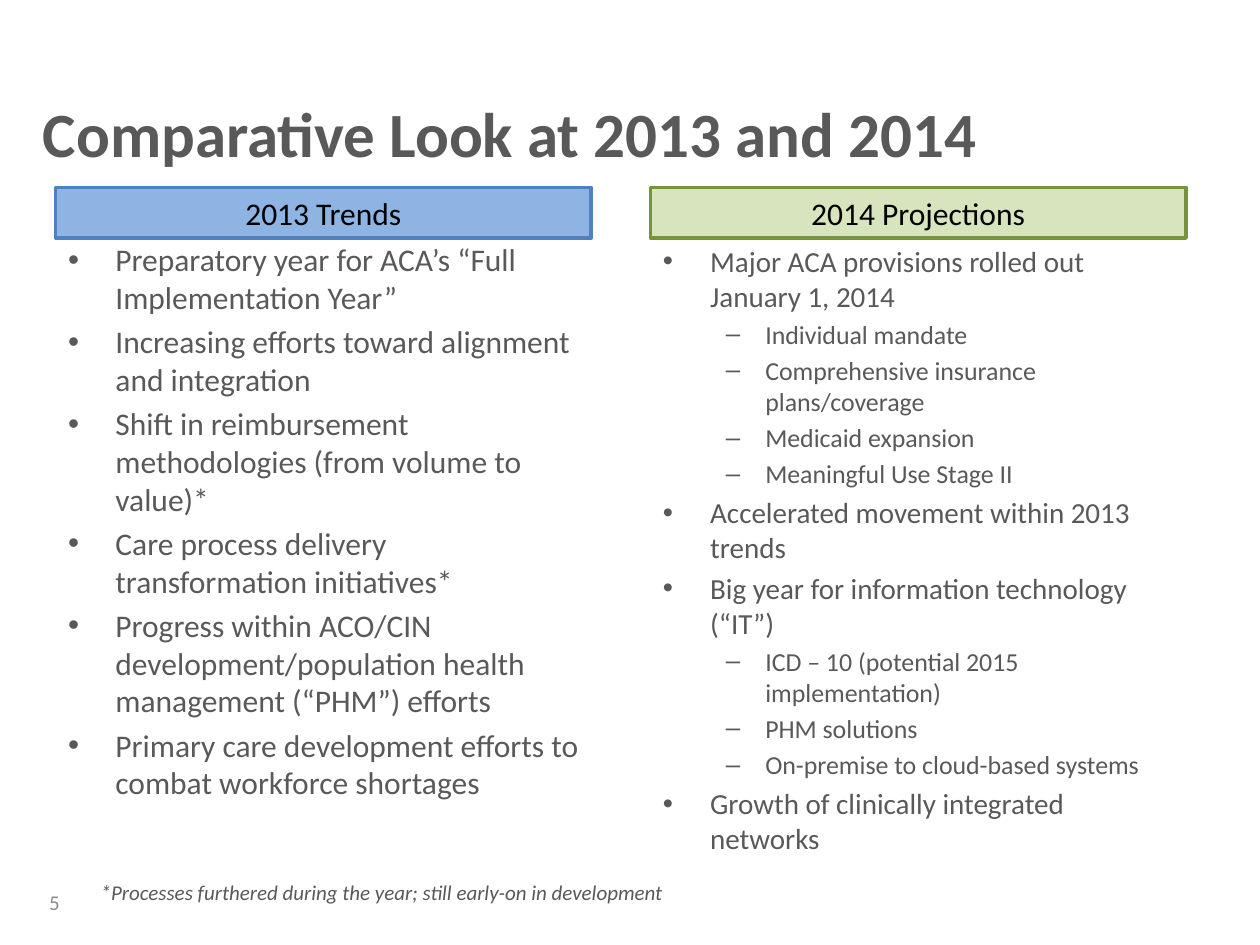
"""Build a slide that sets the trends of 2013 beside the projections for 2014."""
from pptx import Presentation, util as u
from pptx.dml.color import RGBColor
from pptx.enum import shapes, text

GREY = "595959"
TITLE = "Comparative Look at 2013 and 2014"
NOTE = "*Processes furthered during the year; still early-on in development"
COLS = [
    dict(head="2013 Trends", fill="8EB4E3", line="4F81BD", left=1.12,
         top=4.72, high=11.96, sizes=(18, 16), items=[
             (0, "Preparatory year for ACA’s “Full Implementation Year”"),
             (0, "Increasing efforts toward alignment and integration"),
             (0, "Shift in reimbursement methodologies (from volume to value)*"),
             (0, "Care process delivery transformation initiatives*"),
             (0, "Progress within ACO/CIN development/population health "
                 "management (“PHM”) efforts"),
             (0, "Primary care development efforts to combat workforce shortages"),
         ]),
    dict(head="2014 Projections", fill="D7E4BD", line="77933C", left=13.11,
         top=4.78, high=12.19, sizes=(16.6, 14.8), items=[
             (0, "Major ACA provisions rolled out January 1, 2014"),
             (1, "Individual mandate"),
             (1, "Comprehensive insurance plans/coverage"),
             (1, "Medicaid expansion"),
             (1, "Meaningful Use Stage II"),
             (0, "Accelerated movement within 2013 trends"),
             (0, "Big year for information technology (“IT”)"),
             (1, "ICD – 10 (potential 2015 implementation)"),
             (1, "PHM solutions"),
             (1, "On-premise to cloud-based systems"),
             (0, "Growth of clinically integrated networks"),
         ]),
]
WIDE, HEAD_TOP, HEAD_HIGH = 10.8, 3.78, 1.02


def hue(code):
    return RGBColor.from_string(code)


def box(*cms):
    return [u.Cm(n) for n in cms]


def place(shape, *cms):
    shape.left, shape.top, shape.width, shape.height = box(*cms)


def write(shape, items, sizes=(18,), color=GREY, bold=False, italic=False,
          align=text.PP_ALIGN.LEFT, anchor=text.MSO_ANCHOR.TOP):
    frame = shape.text_frame
    frame.word_wrap = True
    frame.auto_size = text.MSO_AUTO_SIZE.NONE
    frame.vertical_anchor = anchor
    for i, (level, words) in enumerate(items):
        para = frame.add_paragraph() if i else frame.paragraphs[0]
        para.level, para.alignment = level, align
        if not i:
            para.space_before = u.Pt(0)
        run = para.add_run()
        run.text = words
        font = run.font
        font.name, font.size = "Calibri", u.Pt(sizes[level])
        font.bold, font.italic = bold, italic
        font.color.rgb = hue(color)


def main():
    deck = Presentation()
    deck.slide_width, deck.slide_height = box(25.4, 19.05)
    slide = deck.slides.add_slide(deck.slide_layouts[3])
    title, *lists = slide.placeholders
    mid = text.MSO_ANCHOR.MIDDLE

    place(title, 0.61, 1.78, 22.86, 1.78)
    write(title, [(0, TITLE)], sizes=(36,), bold=True, anchor=mid)

    for col, body in zip(COLS, lists):
        place(body, col["left"], col["top"], WIDE, col["high"])
        write(body, col["items"], sizes=col["sizes"])
        head = slide.shapes.add_shape(
            shapes.MSO_SHAPE.RECTANGLE,
            *box(col["left"], HEAD_TOP, WIDE, HEAD_HIGH))
        head.shadow.inherit = False
        head.fill.solid()
        head.fill.fore_color.rgb = hue(col["fill"])
        head.line.color.rgb = hue(col["line"])
        head.line.width = u.Pt(2)
        write(head, [(0, col["head"])], color="000000",
              align=text.PP_ALIGN.CENTER)

    note = slide.shapes.add_textbox(*box(1.78, 17.6, 19, 0.76))
    write(note, [(0, NOTE)], sizes=(12,), italic=True)
    page = slide.shapes.add_textbox(*box(0.74, 17.68, 1.8, 1.02))
    write(page, [(0, "5")], sizes=(12,), color="8C8C8C", anchor=mid)

    deck.save("out.pptx")


if __name__ == "__main__":
    main()
